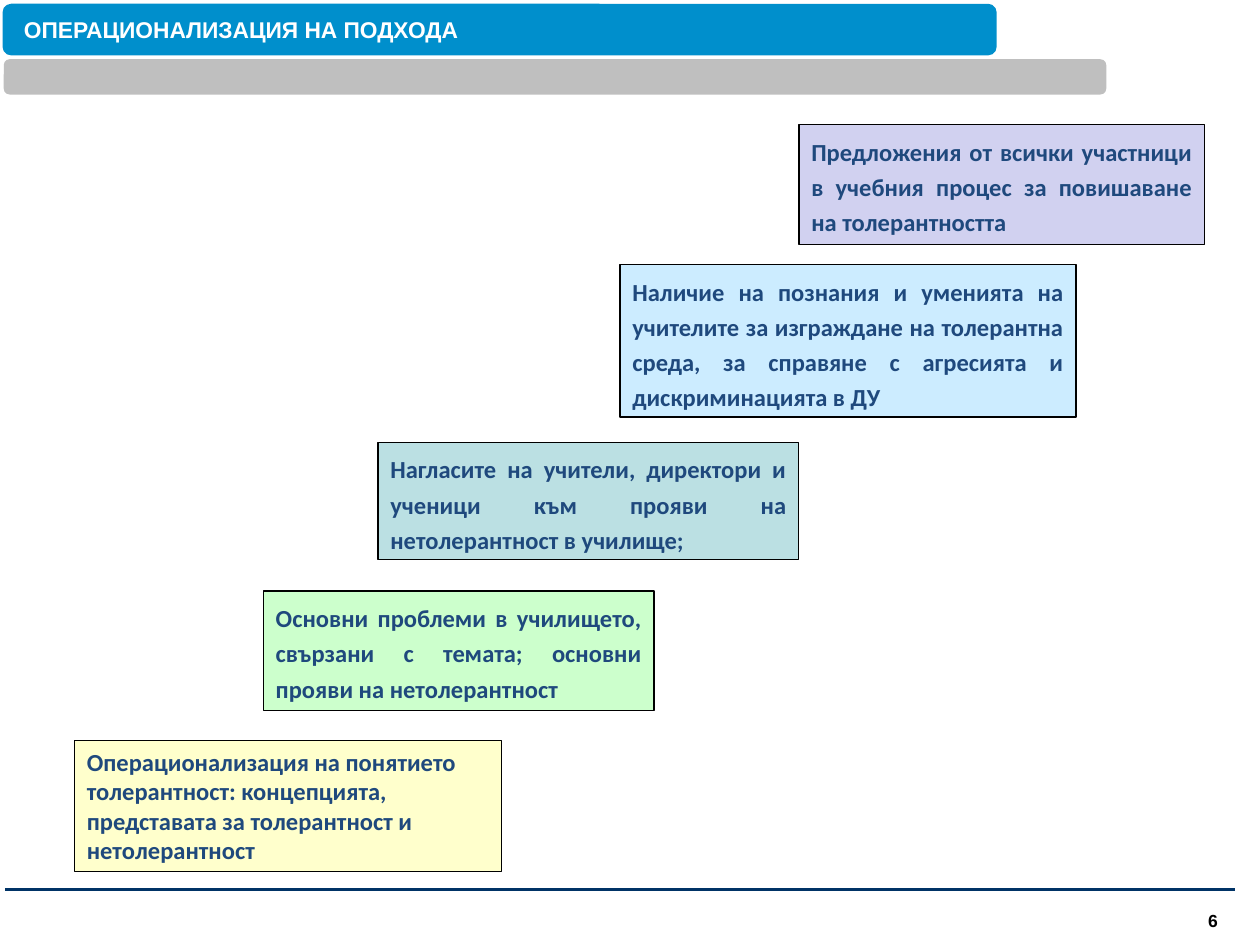
from dataclasses import dataclass

from lxml import etree
from pptx import Presentation
from pptx.dml.color import RGBColor
from pptx.enum.shapes import MSO_CONNECTOR, MSO_SHAPE
from pptx.enum.text import MSO_ANCHOR, PP_ALIGN
from pptx.oxml.ns import qn
from pptx.util import Emu, Pt

RECTANGLE = MSO_SHAPE.RECTANGLE
ROUNDED_BAR = MSO_SHAPE.FLOWCHART_ALTERNATE_PROCESS
STRAIGHT = MSO_CONNECTOR.STRAIGHT
TOP, MIDDLE = MSO_ANCHOR.TOP, MSO_ANCHOR.MIDDLE
LEFT, JUSTIFY = PP_ALIGN.LEFT, PP_ALIGN.JUSTIFY

EMU_PER_PX = 9144


@dataclass(frozen=True)
class TextStyle:
    font: str
    size: float
    color: str


@dataclass(frozen=True)
class Theme:
    title: TextStyle = TextStyle("Arial", 13, "FFFFFF")
    step: TextStyle = TextStyle("Calibri", 14, "1F497D")
    number: TextStyle = TextStyle("Arial", 10, "000000")
    title_bar: str = "008FCC"
    subtitle_bar: str = "BFBFBF"
    footer_line: str = "003366"
    border: str = "000000"
    border_width: float = 0.75
    footer_width: float = 1.75


@dataclass(frozen=True)
class Area:
    left: int
    top: int
    width: int
    height: int

    def emu(self) -> tuple:
        return tuple(px(side) for side in (self.left, self.top, self.width, self.height))


@dataclass(frozen=True)
class Step:
    area: Area
    fill: str
    text: str
    justified: bool = True


THEME = Theme()
BARS = [
    (Area(2, 3, 789, 41), THEME.title_bar),
    (Area(3, 47, 875, 28), THEME.subtitle_bar),
]
STEPS = [
    Step(Area(209, 469, 310, 95), "CCFFCC",
         "Основни проблеми в училището, свързани с темата; "
         "основни прояви на нетолерантност"),
    Step(Area(59, 588, 339, 104), "FFFFCC",
         "Операционализация на понятието толерантност: концепцията, "
         "представата за толерантност и нетолерантност", justified=False),
    Step(Area(300, 351, 334, 93), "BBE0E3",
         "Нагласите на учители, директори и ученици към прояви "
         "на нетолерантност в училище;"),
    Step(Area(492, 210, 362, 121), "CCECFF",
         "Наличие на познания и уменията на учителите за изграждане на толерантна "
         "среда, за справяне с агресията и дискриминацията в ДУ"),
    Step(Area(634, 99, 322, 95), "D1D1F0",
         "Предложения от всички участници в учебния процес "
         "за повишаване на толерантността"),
]


def px(value: int) -> Emu:
    return Emu(value * EMU_PER_PX)


def apply(target, values: dict) -> None:
    for name, value in values.items():
        setattr(target, name, value)


def write(box, text: str, style: TextStyle, frame_format: dict, paragraph_format: dict) -> None:
    frame = box.text_frame
    apply(frame, {"word_wrap": True, **frame_format})
    paragraph = frame.paragraphs[0]
    apply(paragraph, paragraph_format)
    span = paragraph.add_run()
    span.text = text
    apply(span.font, {"name": style.font, "size": Pt(style.size), "bold": True})
    span.font.color.rgb = RGBColor.from_string(style.color)


def draw_shape(page, kind, area: Area, fill: str):
    shape = page.shapes.add_shape(kind, *area.emu())
    shape.shadow.inherit = False
    shape.fill.solid()
    shape.fill.fore_color.rgb = RGBColor.from_string(fill)
    shape.line.fill.background()
    return shape


def draw_step(page, step: Step) -> None:
    box = draw_shape(page, RECTANGLE, step.area, step.fill)
    box.line.color.rgb = RGBColor.from_string(THEME.border)
    box.line.width = Pt(THEME.border_width)
    paragraph_format = {"alignment": LEFT, "space_after": Pt(10)}
    if step.justified:
        paragraph_format |= {"alignment": JUSTIFY, "line_spacing": 1.2}
    write(box, step.text, THEME.step, {"vertical_anchor": TOP}, paragraph_format)


def draw_label(page, area: Area, text: str, style: TextStyle, frame_format: dict) -> None:
    box = page.shapes.add_textbox(*area.emu())
    write(box, text, style, frame_format, {"alignment": LEFT})


def draw_footer_line(page, left: int, right: int, top: int) -> None:
    line = page.shapes.add_connector(STRAIGHT, px(left), px(top), px(right), px(top))
    line.line.color.rgb = RGBColor.from_string(THEME.footer_line)
    line.line.width = Pt(THEME.footer_width)
    etree.SubElement(line._element.spPr, qn("a:effectLst"))


def main() -> None:
    deck = Presentation()
    apply(deck, {"slide_width": px(1000), "slide_height": px(750)})
    page = deck.slides.add_slide(deck.slide_layouts[6])
    draw_label(page, Area(949, 717, 37, 27), "6", THEME.number, {"vertical_anchor": TOP})
    for area, fill in BARS:
        draw_shape(page, ROUNDED_BAR, area, fill)
    draw_footer_line(page, 4, 980, 706)
    for step in STEPS:
        draw_step(page, step)
    draw_label(page, Area(4, 6, 878, 35), "ОПЕРАЦИОНАЛИЗАЦИЯ НА ПОДХОДА", THEME.title,
               {"vertical_anchor": MIDDLE, "margin_left": px(15)})
    deck.save("out.pptx")


if __name__ == "__main__":
    main()
